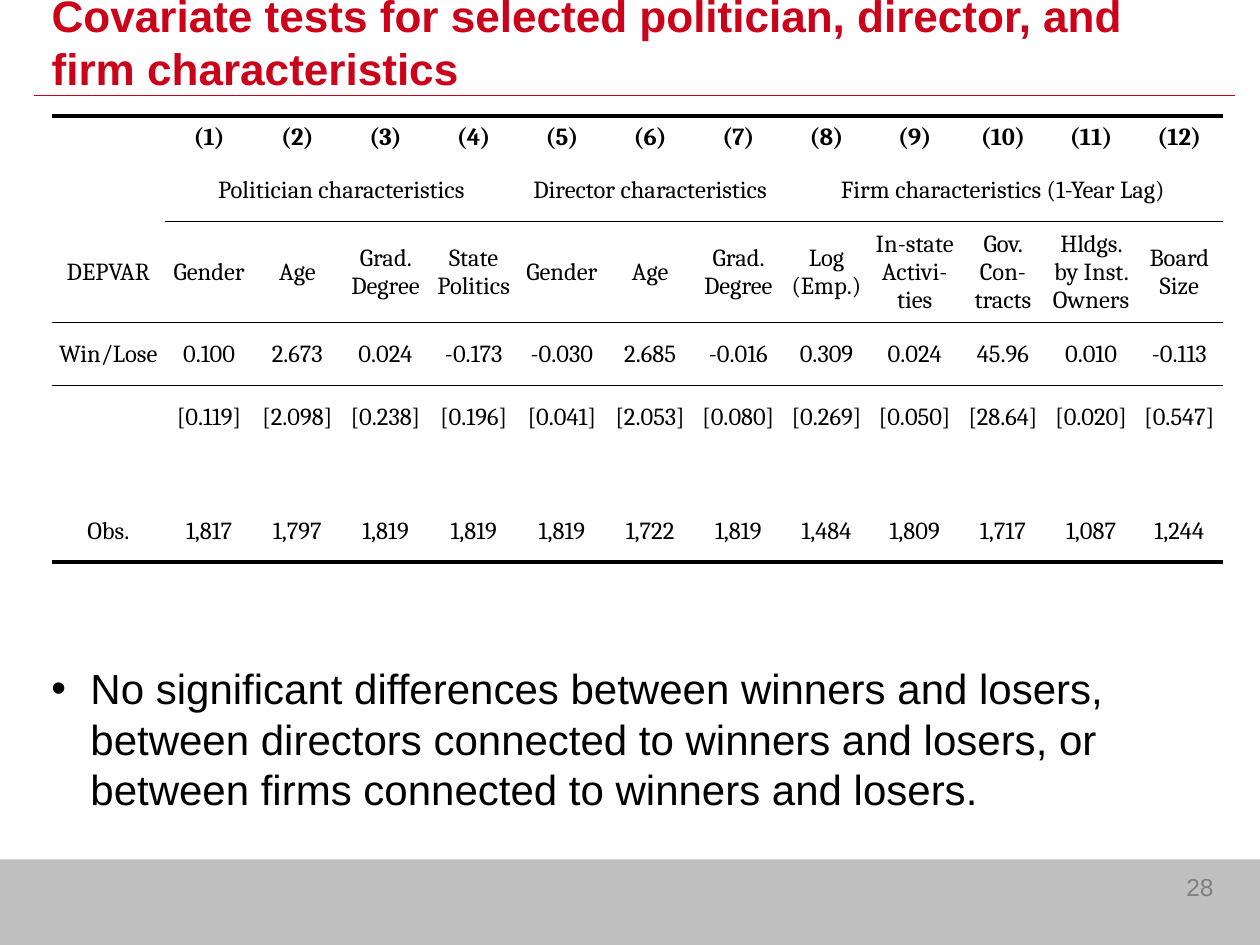
from typing import NamedTuple

from lxml import etree
from pptx import Presentation
from pptx.dml.color import RGBColor
from pptx.enum.shapes import MSO_CONNECTOR, MSO_SHAPE
from pptx.enum.text import MSO_ANCHOR, MSO_AUTO_SIZE, PP_ALIGN
from pptx.oxml.ns import qn
from pptx.util import Inches, Pt

LEFT, CENTER, RIGHT = PP_ALIGN.LEFT, PP_ALIGN.CENTER, PP_ALIGN.RIGHT
MIDDLE, NO_FIT = MSO_ANCHOR.MIDDLE, MSO_AUTO_SIZE.NONE
STRAIGHT, RECTANGLE = MSO_CONNECTOR.STRAIGHT, MSO_SHAPE.RECTANGLE

RED = RGBColor(0xCB, 0x02, 0x1A)
BLACK = RGBColor(0x00, 0x00, 0x00)
SILVER = RGBColor(0xC0, 0xC0, 0xC0)
GRAY = RGBColor(0x7F, 0x7F, 0x7F)
NO_GRID_STYLE = "{2D5ABB26-0587-4C30-8999-92F81FD0307C}"


class TextStyle(NamedTuple):
    size: float
    color: RGBColor
    font: str = "Arial"
    bold: bool = False
    align: PP_ALIGN = LEFT


class Span(NamedTuple):
    first: int
    last: int
    label: str


class Rule(NamedTuple):
    """A horizontal table line, drawn above the row with this number."""
    row: int
    first_column: int
    width: float


TITLE = TextStyle(25.2, RED, bold=True)
BULLET = TextStyle(24, BLACK)
PAGE_NUMBER = TextStyle(14, GRAY, align=RIGHT)
BODY_CELL = TextStyle(14, BLACK, "Cambria", align=CENTER)
HEAD_CELL = BODY_CELL._replace(bold=True)

COLUMN_WIDTHS = [0.9] + [0.7] * 12
ROW_HEIGHTS = [0.34, 0.5, 0.8, 0.5, 0.5, 0.4, 0.5]
GROUP_ROW = 1
GROUPS = [
    Span(1, 4, "Politician characteristics"),
    Span(5, 7, "Director characteristics"),
    Span(8, 12, "Firm characteristics (1-Year Lag)"),
]
RULES = [Rule(0, 0, 2.25), Rule(2, 1, 1), Rule(3, 0, 1), Rule(7, 0, 2.25)]
ROWS = {
    0: [""] + [f"({number})" for number in range(1, 13)],
    2: ["DEPVAR", "Gender", "Age", "Grad. Degree", "State Politics", "Gender",
        "Age", "Grad. Degree", "Log\n(Emp.)", "In-state Activi-ties",
        "Gov. Con-tracts", "Hldgs. by Inst. Owners", "Board Size"],
    3: ["Win/Lose", "0.100", "2.673", "0.024", "-0.173", "-0.030", "2.685",
        "-0.016", "0.309", "0.024", "45.96", "0.010", "-0.113"],
    4: ["", "[0.119]", "[2.098]", "[0.238]", "[0.196]", "[0.041]", "[2.053]",
        "[0.080]", "[0.269]", "[0.050]", "[28.64]", "[0.020]", "[0.547]"],
    6: ["Obs.", "1,817", "1,797", "1,819", "1,819", "1,819", "1,722",
        "1,819", "1,484", "1,809", "1,717", "1,087", "1,244"],
}


def write(frame, text: str, style: TextStyle) -> None:
    frame.text = text
    frame.word_wrap = True
    for para in frame.paragraphs:
        para.alignment = style.align
        for span in para.runs:
            span.font.name = style.font
            span.font.size = Pt(style.size)
            span.font.bold = style.bold
            span.font.color.rgb = style.color


def add_text(page, left: float, top: float, width: float, height: float,
             text: str, style: TextStyle):
    box = page.shapes.add_textbox(Inches(left), Inches(top),
                                  Inches(width), Inches(height))
    write(box.text_frame, text, style)
    return box


def add_bullet(para) -> None:
    properties = para._p.get_or_add_pPr()
    properties.set("marL", str(Inches(0.31)))
    properties.set("indent", str(-Inches(0.31)))
    etree.SubElement(properties, qn("a:buFont"), typeface="Arial")
    etree.SubElement(properties, qn("a:buChar"), char="•")


def add_border(cell, side: str, width: float) -> None:
    properties = cell._tc.get_or_add_tcPr()
    line = etree.SubElement(properties, qn(f"a:{side}"), w=str(Pt(width)))
    fill = etree.SubElement(line, qn("a:solidFill"))
    etree.SubElement(fill, qn("a:srgbClr"), val=str(BLACK))


def add_footer_and_rule(page) -> None:
    band = page.shapes.add_shape(RECTANGLE, 0, Inches(6.82),
                                 Inches(10), Inches(0.68))
    band.shadow.inherit = False
    band.fill.solid()
    band.fill.fore_color.rgb = SILVER
    band.line.fill.background()
    rule = page.shapes.add_connector(STRAIGHT, Inches(0.27), Inches(0.76),
                                     Inches(9.8), Inches(0.76))
    rule.line.color.rgb = RED
    rule.line.width = Pt(0.75)
    etree.SubElement(rule._element.spPr, qn("a:effectLst"))


def add_title(page, text: str) -> None:
    title = page.shapes.title
    title.left, title.top = Inches(0.31), Inches(0.05)
    title.width, title.height = Inches(9.25), Inches(0.55)
    write(title.text_frame, text, TITLE)
    title.text_frame.auto_size = NO_FIT
    title.text_frame.vertical_anchor = MIDDLE


def add_covariate_table(page) -> None:
    table = page.shapes.add_table(
        len(ROW_HEIGHTS), len(COLUMN_WIDTHS), Inches(0.41), Inches(0.92),
        Inches(sum(COLUMN_WIDTHS)), Inches(sum(ROW_HEIGHTS))).table
    table.first_row = table.horz_banding = False
    table._tbl.tblPr.find(qn("a:tableStyleId")).text = NO_GRID_STYLE
    for column, width in zip(table.columns, COLUMN_WIDTHS):
        column.width = Inches(width)
    for row, height in zip(table.rows, ROW_HEIGHTS):
        row.height = Inches(height)

    # Margins, lines and fill of every cell
    for row in range(len(ROW_HEIGHTS)):
        for column in range(len(COLUMN_WIDTHS)):
            cell = table.cell(row, column)
            cell.margin_left = cell.margin_right = Inches(0.01)
            cell.margin_top, cell.margin_bottom = Inches(0.01), 0
            cell.vertical_anchor = MIDDLE
            for side, edge in (("lnT", row), ("lnB", row + 1)):
                for rule in RULES:
                    if rule.row == edge and column >= rule.first_column:
                        add_border(cell, side, rule.width)
            cell.fill.background()

    # Column groups, then the headings and values
    for group in GROUPS:
        cell = table.cell(GROUP_ROW, group.first)
        cell.merge(table.cell(GROUP_ROW, group.last))
        write(cell.text_frame, group.label, BODY_CELL)
    for row, texts in ROWS.items():
        for column, text in enumerate(texts):
            if text:
                write(table.cell(row, column).text_frame, text,
                      BODY_CELL if row else HEAD_CELL)


def main() -> None:
    deck = Presentation()
    deck.slide_width, deck.slide_height = Inches(10), Inches(7.5)
    page = deck.slides.add_slide(deck.slide_layouts[5])

    add_footer_and_rule(page)
    add_title(page, "Covariate tests for selected politician, director, "
                    "and firm characteristics")

    # Conclusion below the table
    conclusion = add_text(
        page, 0.31, 5.21, 9.42, 0.71,
        "No significant differences between winners and losers, between "
        "directors connected to winners and losers, or between firms "
        "connected to winners and losers.", BULLET)
    add_bullet(conclusion.text_frame.paragraphs[0])

    add_text(page, 8.94, 6.87, 0.79, 0.5, "28", PAGE_NUMBER)
    add_covariate_table(page)
    deck.save("out.pptx")


if __name__ == "__main__":
    main()
